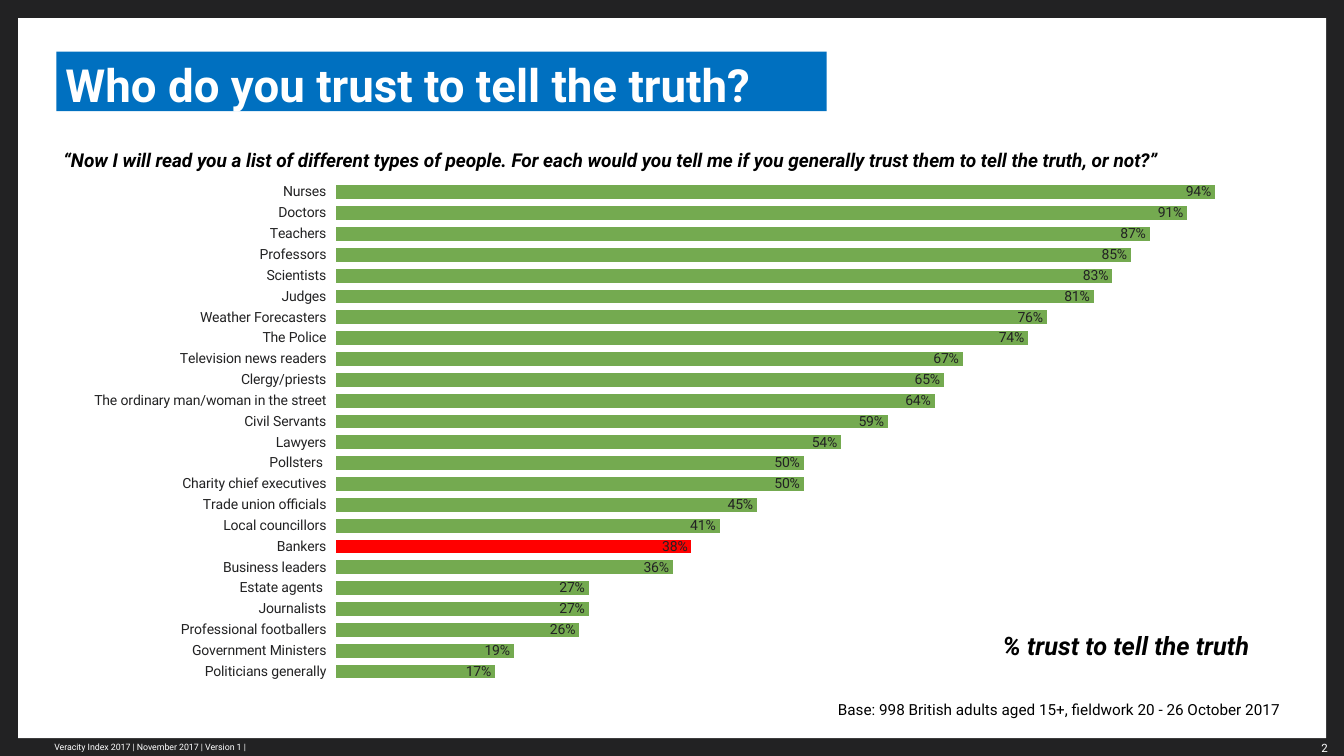
"""Build the slide on public trust in professions."""
from dataclasses import dataclass

from lxml.etree import SubElement
from pptx import Presentation
from pptx.chart.data import CategoryChartData
from pptx.dml.color import RGBColor
from pptx.enum.chart import XL_CHART_TYPE as ChartType
from pptx.enum.chart import XL_LABEL_POSITION as LabelPos
from pptx.enum.chart import XL_TICK_MARK as Tick
from pptx.enum.shapes import MSO_SHAPE as Shape
from pptx.enum.text import MSO_ANCHOR as Anchor
from pptx.enum.text import MSO_AUTO_SIZE as AutoSize
from pptx.enum.text import PP_ALIGN as Align
from pptx.oxml.ns import qn
from pptx.util import Cm, Pt


@dataclass(frozen=True)
class Theme:
    font: str = "Roboto"
    frame: RGBColor = RGBColor(0x22, 0x22, 0x23)
    white: RGBColor = RGBColor(0xFF, 0xFF, 0xFF)
    black: RGBColor = RGBColor(0, 0, 0)
    title_fill: RGBColor = RGBColor(0x00, 0x70, 0xC0)
    bar: RGBColor = RGBColor(0x74, 0xAA, 0x50)
    highlight: RGBColor = RGBColor(0xFF, 0, 0)
    title_size: float = 32.6
    caption_size: float = 18.1
    question_size: float = 13.6
    base_size: float = 10.9
    chart_size: float = 10
    page_size: float = 8.2
    footer_size: float = 6.3


THEME = Theme()

TRUST = {
    "Nurses": 0.94,
    "Doctors": 0.91,
    "Teachers": 0.87,
    "Professors": 0.85,
    "Scientists": 0.83,
    "Judges": 0.81,
    "Weather Forecasters": 0.76,
    "The Police": 0.74,
    "Television news readers": 0.67,
    "Clergy/priests": 0.65,
    "The ordinary man/woman in the street": 0.64,
    "Civil Servants": 0.59,
    "Lawyers": 0.54,
    "Pollsters ": 0.5,
    "Charity chief executives": 0.5,
    "Trade union officials": 0.45,
    "Local councillors": 0.41,
    "Bankers": 0.38,
    "Business leaders": 0.36,
    "Estate agents ": 0.27,
    "Journalists": 0.27,
    "Professional footballers": 0.26,
    "Government Ministers": 0.19,
    "Politicians generally": 0.17,
}
HIGHLIGHTED = "Bankers"
PLOT_LAYOUT = {"x": 0.22, "y": 0.02, "w": 0.76, "h": 0.96}


def place(sp, box):
    """Move and size a shape to a box given in centimetres."""
    sp.left, sp.top, sp.width, sp.height = map(Cm, box)


def set_font(font, size, color, bold=False, italic=False):
    """Apply the theme typeface with the given look."""
    font.name, font.size = THEME.font, Pt(size)
    font.bold, font.italic = bold, italic
    font.color.rgb = color


def set_insets(tf, left, top, right, bottom):
    """Set the text margins in centimetres."""
    tf.margin_left, tf.margin_top = Cm(left), Cm(top)
    tf.margin_right, tf.margin_bottom = Cm(right), Cm(bottom)


def add_text(s, text, box, size, color=THEME.black, align=Align.LEFT,
             strong=False, insets=(0.18, 0.1, 0.18, 0.1), anchor=Anchor.TOP):
    """Add a one-paragraph text box."""
    tf = s.shapes.add_textbox(*map(Cm, box)).text_frame
    tf.word_wrap = True
    tf.vertical_anchor = anchor
    set_insets(tf, *insets)
    p = tf.paragraphs[0]
    p.text, p.alignment, p.line_spacing = text, align, 1.1
    set_font(p.font, size, color, strong, strong)


def add_panel(s, box):
    """Add the white panel behind the title and content."""
    sp = s.shapes.add_shape(Shape.RECTANGLE, *map(Cm, box))
    sp.shadow.inherit = False
    sp.fill.solid()
    sp.fill.fore_color.rgb = THEME.white
    sp.line.fill.background()
    s.shapes.title.element.addprevious(sp.element)


def fill_title(s, text, box):
    """Format the title placeholder as a blue banner."""
    sp = s.shapes.title
    place(sp, box)
    sp.fill.solid()
    sp.fill.fore_color.rgb = THEME.title_fill
    tf = sp.text_frame
    tf.auto_size = AutoSize.NONE
    tf.vertical_anchor = Anchor.MIDDLE
    set_insets(tf, 0.23, 0.2, 0.23, 0)
    p = tf.paragraphs[0]
    p.text, p.alignment, p.line_spacing = text, Align.LEFT, Pt(37.2)
    set_font(p.font, THEME.title_size, THEME.white, bold=True)


def set_plot_layout(chart, layout):
    """Fix the inner plot area as fractions of the chart."""
    plot_area = chart.element.find(".//" + qn("c:plotArea"))
    for old in plot_area.findall(qn("c:layout")):
        plot_area.remove(old)
    node = SubElement(plot_area, qn("c:layout"))
    plot_area.insert(0, node)
    manual = SubElement(node, qn("c:manualLayout"))
    settings = {"layoutTarget": "inner", "xMode": "edge", "yMode": "edge", **layout}
    for name, value in settings.items():
        SubElement(manual, qn("c:" + name)).set("val", str(value))


def add_trust_chart(s, box):
    """Add the ranked bar chart with one highlighted profession."""
    data = CategoryChartData(number_format="0%")
    data.categories = list(TRUST)
    data.add_series("Series 1", TRUST.values())
    chart = s.shapes.add_chart(ChartType.BAR_CLUSTERED, *map(Cm, box), data).chart
    chart.has_legend = chart.has_title = False
    set_font(chart.font, THEME.chart_size, THEME.frame)
    set_plot_layout(chart, PLOT_LAYOUT)

    cat_axis, val_axis = chart.category_axis, chart.value_axis
    cat_axis.reverse_order = True
    cat_axis.major_tick_mark = Tick.OUTSIDE
    cat_axis.format.line.fill.background()
    val_axis.minimum_scale, val_axis.maximum_scale = 0, 1
    val_axis.has_major_gridlines = False
    val_axis.visible = False

    plot = chart.plots[0]
    plot.gap_width, plot.vary_by_categories = 50, False
    plot.has_data_labels = True
    labels = plot.data_labels
    labels.show_value, labels.position = True, LabelPos.INSIDE_END
    labels.number_format, labels.number_format_is_linked = "0%", False
    set_font(labels.font, THEME.chart_size, THEME.frame)

    series = plot.series[0]
    point = series.points[list(TRUST).index(HIGHLIGHTED)]
    for bar, color in ((series, THEME.bar), (point, THEME.highlight)):
        bar.format.fill.solid()
        bar.format.fill.fore_color.rgb = color


def main():
    """Compose and save the slide."""
    prs = Presentation()
    prs.slide_width, prs.slide_height = Cm(33.87), Cm(19.05)
    s = prs.slides.add_slide(prs.slide_layouts[5])
    s.background.fill.solid()
    s.background.fill.fore_color.rgb = THEME.frame

    add_panel(s, (0.46, 0.46, 32.96, 18.14))
    fill_title(s, "Who do you trust to tell the truth?", (1.42, 1.3, 19.41, 1.5))
    add_trust_chart(s, (1.65, 4.32, 31.01, 13.13))
    add_text(s, "“Now I will read you a list of different types of people. For each would "
             "you tell me if you generally trust them to tell the truth, or not?”",
             (1.42, 3.58, 31.47, 0.81), THEME.question_size, strong=True)
    add_text(s, "% trust to tell the truth ", (23.29, 15.7, 8.53, 1.04),
             THEME.caption_size, align=Align.RIGHT, strong=True)
    add_text(s, "Base: 998 British adults aged 15+, fieldwork 20 - 26 October 2017",
             (18.92, 17.5, 13.51, 0.69), THEME.base_size, align=Align.RIGHT)
    add_text(s, "Veracity Index 2017 | November 2017 | Version 1 |",
             (1.37, 18.59, 12.34, 0.46), THEME.footer_size, THEME.white,
             insets=(0, 0, 0, 0), anchor=Anchor.MIDDLE)
    add_text(s, "2", (32.39, 18.64, 1.07, 0.38), THEME.page_size, THEME.white,
             Align.RIGHT, insets=(0, 0, 0, 0))
    prs.save("out.pptx")


if __name__ == "__main__":
    main()
